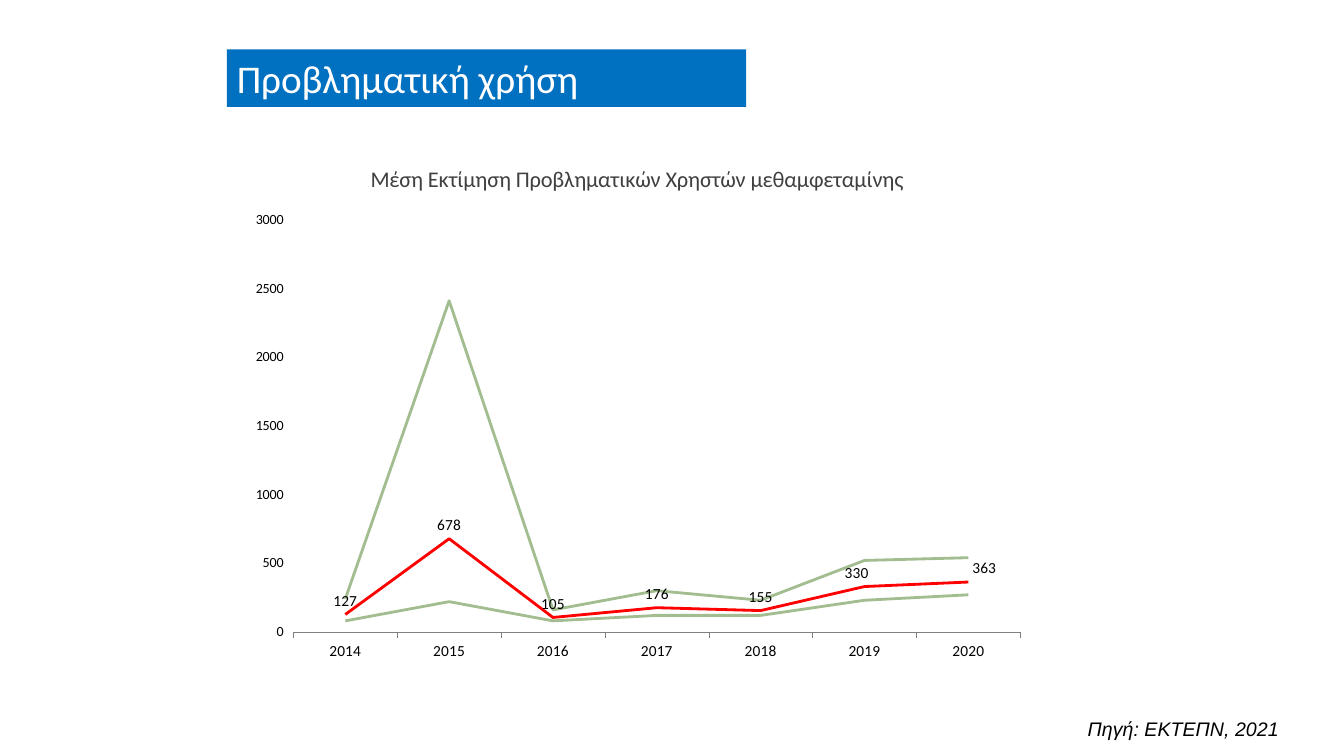
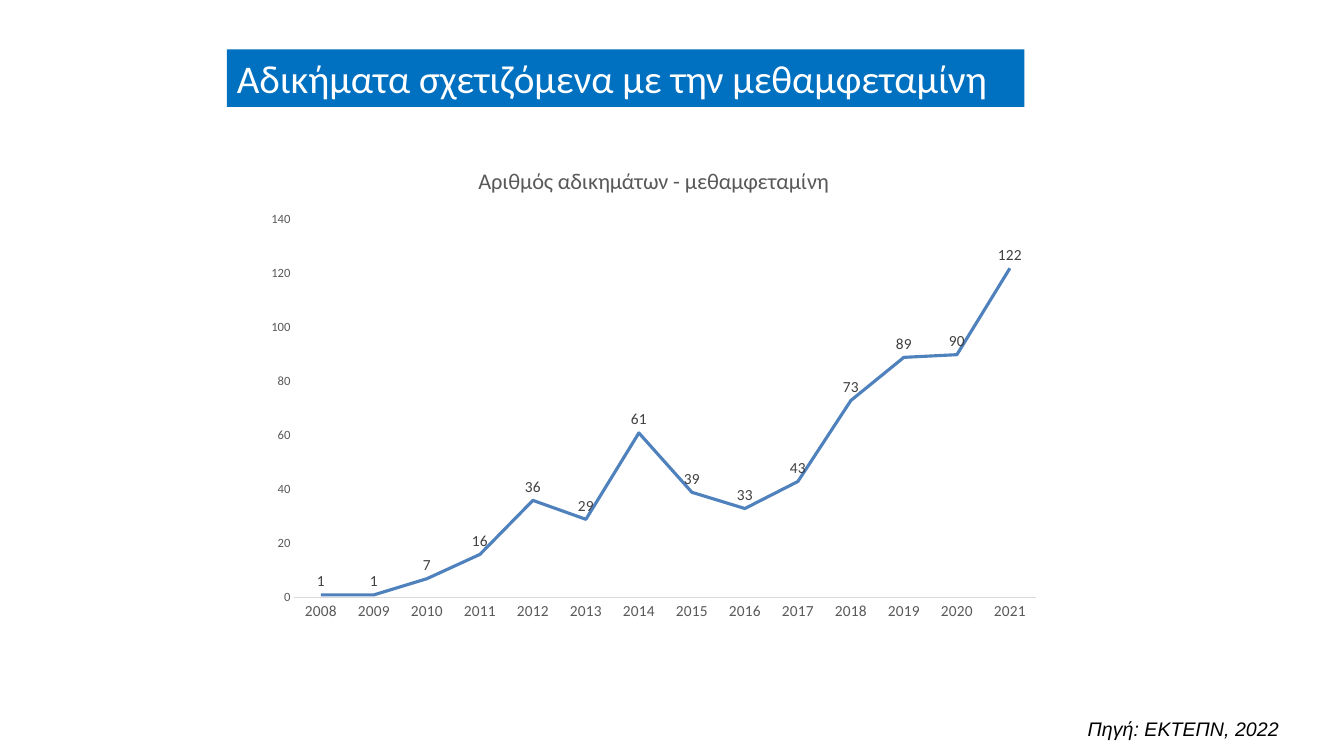
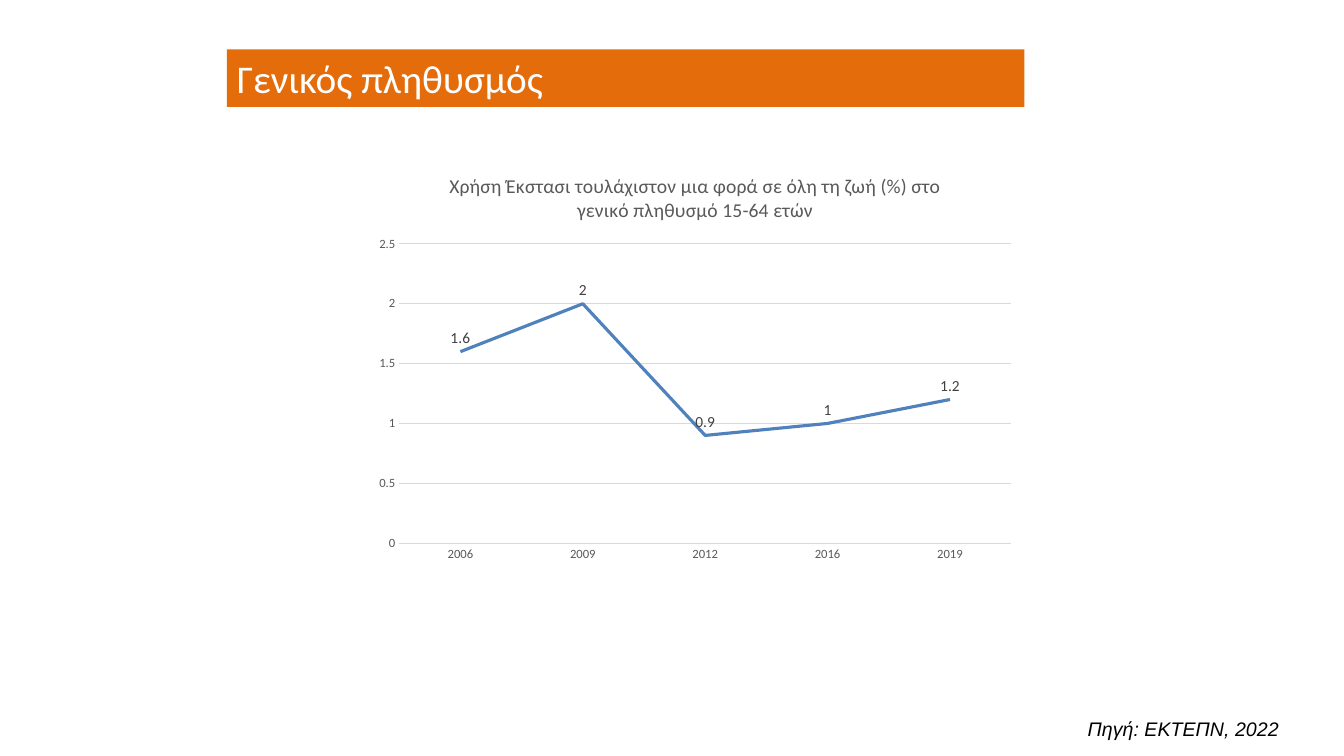
from lxml.etree import SubElement
from pptx import Presentation
from pptx.chart.data import CategoryChartData
from pptx.dml.color import RGBColor
from pptx.enum.chart import XL_CHART_TYPE, XL_LABEL_POSITION, XL_TICK_MARK
from pptx.enum.shapes import MSO_SHAPE
from pptx.enum.text import MSO_ANCHOR, PP_ALIGN
from pptx.oxml import parse_xml
from pptx.oxml.ns import nsdecls, qn
from pptx.util import Inches, Pt

BLACK = RGBColor(0x00, 0x00, 0x00)
WHITE = RGBColor(0xFF, 0xFF, 0xFF)
DARK_GREY = RGBColor(0x40, 0x40, 0x40)
TEXT_GREY = RGBColor(0x59, 0x59, 0x59)
AXIS_GREY = RGBColor(0x80, 0x80, 0x80)
LIGHT_GREY = RGBColor(0xD9, 0xD9, 0xD9)
BAND_BLUE = RGBColor(0x00, 0x70, 0xC0)
BAND_ORANGE = RGBColor(0xE4, 0x6C, 0x0A)
RED = RGBColor(0xFF, 0x00, 0x00)
GREEN = RGBColor(0xA2, 0xBD, 0x90)
LINE_BLUE = RGBColor(0x4F, 0x81, 0xBD)

ECSTASY_TITLE = "Χρήση Έκστασι τουλάχιστον μια φορά σε όλη τη ζωή (%) στο γενικό πληθυσμό 15-64 ετών"

# Chart and plot boxes are left, top, width, height in inches.
# Series are name, colour, values; label shifts are fractions of the chart size.
SLIDES = [
    {
        "heading": "Προβληματική χρήση", "band": (BAND_BLUE, 5.15), "year": 2021,
        "type": XL_CHART_TYPE.LINE,
        "chart": (2.37, 1.43, 7.9, 5.23), "plot": (2.91, 2.18, 7.21, 4.09),
        "title": ("Μέση Εκτίμηση Προβληματικών Χρηστών μεθαμφεταμίνης", 16, DARK_GREY),
        "categories": range(2014, 2021),
        "series": [
            ("Series 1", RED, (127, 678, 105, 176, 155, 330, 363)),
            ("Series 2", GREEN, (80, 220, 80, 120, 120, 230, 270)),
            ("Series 3", GREEN, (240, 2410, 160, 300, 230, 520, 540)),
        ],
        "line_width": 2, "label_color": BLACK, "label_shifts": {5: -0.01, 6: 0.02},
        "category_axis": (11, BLACK, AXIS_GREY, 0.25), "value_axis": (10, BLACK),
        "tick": XL_TICK_MARK.OUTSIDE, "scale": (3000, 500), "grid": False,
    },
    {
        "heading": "Αδικήματα σχετιζόμενα με την μεθαμφεταμίνη",
        "band": (BAND_BLUE, 7.91), "year": 2022,
        "type": XL_CHART_TYPE.LINE,
        "chart": (2.53, 1.46, 7.91, 4.8), "plot": (2.92, 2.18, 7.36, 3.75),
        "title": ("Αριθμός αδικημάτων - μεθαμφεταμίνη", 16, TEXT_GREY),
        "categories": range(2008, 2022),
        "series": [
            ("Series 1", LINE_BLUE, (1, 1, 7, 16, 36, 29, 61, 39, 33, 43, 73, 89, 90, 122)),
        ],
        "line_width": 2.25, "label_color": DARK_GREY, "label_shifts": {},
        "category_axis": (11, TEXT_GREY, LIGHT_GREY, 0.75), "value_axis": (9, TEXT_GREY),
        "tick": XL_TICK_MARK.NONE, "scale": (140, 20), "grid": False,
    },
    {
        "heading": "Γενικός πληθυσμός", "band": (BAND_ORANGE, 7.91), "year": 2022,
        "type": XL_CHART_TYPE.LINE_STACKED,
        "chart": (3.63, 1.54, 6.53, 4.11), "plot": (3.96, 2.42, 6.07, 2.97),
        "title": (ECSTASY_TITLE, 14, TEXT_GREY),
        "categories": (2006, 2009, 2012, 2016, 2019),
        "series": [(ECSTASY_TITLE, LINE_BLUE, (1.6, 2, 0.9, 1, 1.2))],
        "line_width": 2.25, "label_color": DARK_GREY, "label_shifts": {},
        "category_axis": (9, TEXT_GREY, LIGHT_GREY, 0.75), "value_axis": (9, TEXT_GREY),
        "tick": XL_TICK_MARK.NONE, "scale": (2.5, 0.5), "grid": True,
    },
]


def style_font(font, size, color, **values):
    font.color.rgb = color
    for name, value in {"name": "Calibri", "size": Pt(size), "bold": False, **values}.items():
        setattr(font, name, value)


def manual_layout(**values):
    """Return a c:layout element holding the values in the order given."""
    layout = parse_xml(f"<c:layout {nsdecls('c')}><c:manualLayout/></c:layout>")
    for name, value in values.items():
        SubElement(layout[0], qn(f"c:{name}")).set("val", str(value))
    return layout


deck = Presentation()
deck.slide_width, deck.slide_height = Inches(13.33), Inches(7.5)

for content in SLIDES:
    slide = deck.slides.add_slide(deck.slide_layouts[6])

    source = slide.shapes.add_textbox(Inches(10.69), Inches(7.06), Inches(3.17), Inches(0.34))
    source.text_frame.word_wrap = True
    span = source.text_frame.paragraphs[0].add_run()
    span.text = f"Πηγή: ΕΚΤΕΠΝ, {content['year']}"
    style_font(span.font, 14, BLACK, name="Arial", italic=True)

    band_color, band_width = content["band"]
    band = slide.shapes.add_shape(
        MSO_SHAPE.RECTANGLE, Inches(2.25), Inches(0.49), Inches(band_width), Inches(0.57))
    band.shadow.inherit = False
    band.fill.solid()
    band.fill.fore_color.rgb = band_color
    band.line.fill.background()
    band.text_frame.word_wrap = True
    band.text_frame.vertical_anchor = MSO_ANCHOR.MIDDLE
    para = band.text_frame.paragraphs[0]
    para.alignment = PP_ALIGN.LEFT
    span = para.add_run()
    span.text = content["heading"]
    style_font(span.font, 28, WHITE)

    chart_data = CategoryChartData()
    chart_data.categories = [str(year) for year in content["categories"]]
    for name, _, values in content["series"]:
        chart_data.add_series(name, values)
    chart_box = content["chart"]
    chart = slide.shapes.add_chart(
        content["type"], *[Inches(length) for length in chart_box], chart_data).chart
    chart.has_legend = False
    style_font(chart.font, 10, BLACK)

    title, title_size, title_color = content["title"]
    chart.has_title = True
    chart.chart_title.include_in_layout = False
    span = chart.chart_title.text_frame.paragraphs[0].add_run()
    span.text = title
    style_font(span.font, title_size, title_color)

    chart_left, chart_top, chart_width, chart_height = chart_box
    plot_left, plot_top, plot_width, plot_height = content["plot"]
    plot_area = chart.plots[0]._element.getparent()
    for layout in plot_area.findall(qn("c:layout")):
        plot_area.remove(layout)
    plot_area.insert(0, manual_layout(
        layoutTarget="inner", xMode="edge", yMode="edge",
        x=(plot_left - chart_left) / chart_width, y=(plot_top - chart_top) / chart_height,
        w=plot_width / chart_width, h=plot_height / chart_height))

    category_axis, value_axis = chart.category_axis, chart.value_axis
    size, color, line_color, line_width = content["category_axis"]
    style_font(category_axis.tick_labels.font, size, color)
    category_axis.format.line.color.rgb = line_color
    category_axis.format.line.width = Pt(line_width)
    style_font(value_axis.tick_labels.font, *content["value_axis"])
    value_axis.format.line.fill.background()
    value_axis.minimum_scale = 0
    value_axis.maximum_scale, value_axis.major_unit = content["scale"]
    for axis in (category_axis, value_axis):
        axis.major_tick_mark = content["tick"]
        axis.minor_tick_mark = XL_TICK_MARK.NONE
    value_axis.has_major_gridlines = content["grid"]
    if content["grid"]:
        value_axis.major_gridlines.format.line.color.rgb = LIGHT_GREY
        value_axis.major_gridlines.format.line.width = Pt(0.75)

    plot = chart.plots[0]
    plot.vary_by_categories = False
    for series, (_, color, _) in zip(plot.series, content["series"]):
        series.smooth = False
        series.marker.style = None
        series.format.line.color.rgb = color
        series.format.line.width = Pt(content["line_width"])
        series.marker._element.get_or_add_marker().get_or_add_symbol().set("val", "none")

    labeled = plot.series[0]
    labels = labeled.data_labels
    labels.show_value = True
    labels.position = XL_LABEL_POSITION.ABOVE
    style_font(labels.font, 11, content["label_color"])
    for index, shift in content["label_shifts"].items():
        label = labeled.points[index].data_label
        label.position = XL_LABEL_POSITION.ABOVE
        style_font(label.font, 11, content["label_color"])
        label_element = labels._element.find(f"{qn('c:dLbl')}[{qn('c:idx')}][last()]")
        label_element.find(qn("c:idx")).addnext(manual_layout(x=shift, y=0))

deck.save("out.pptx")
